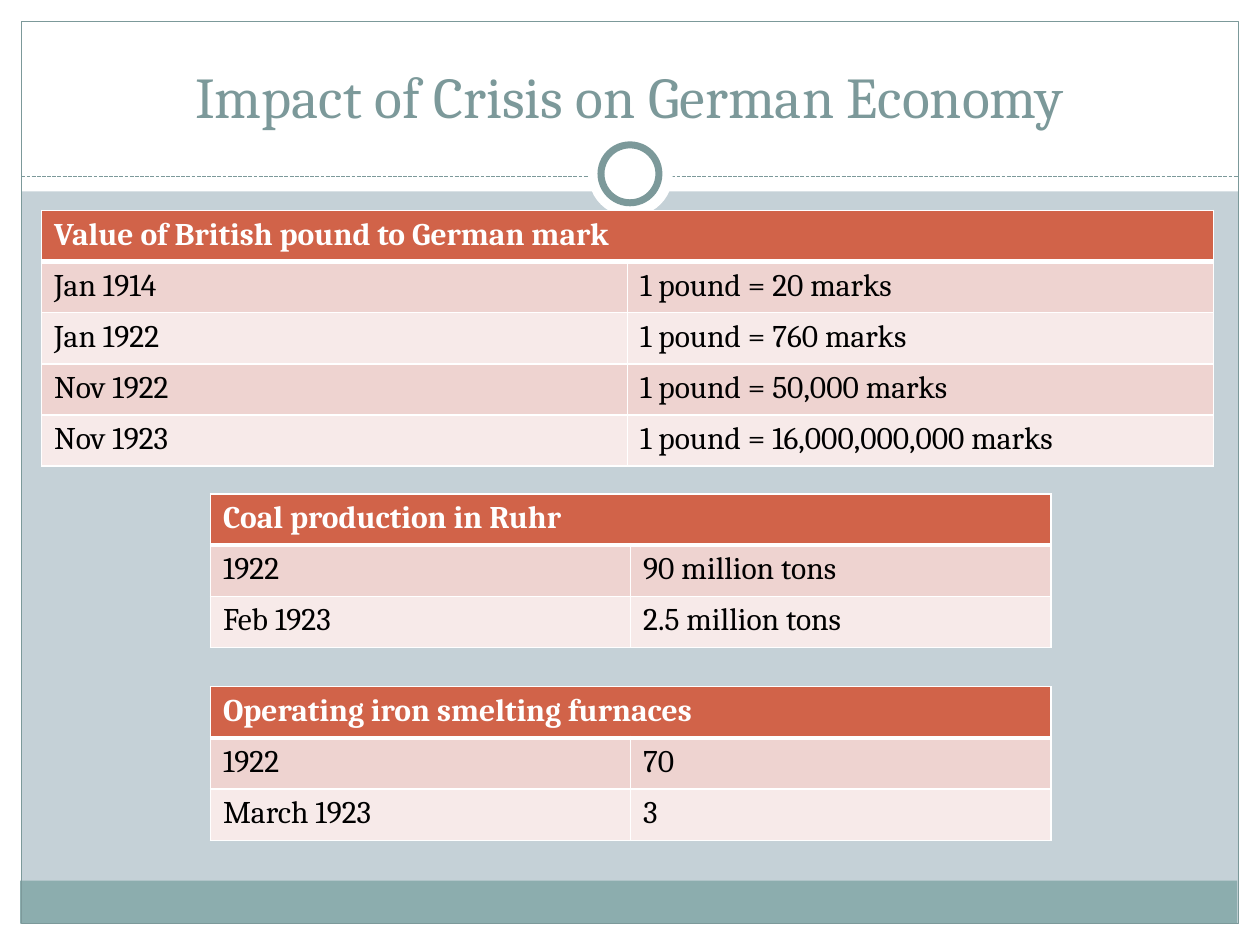
from pptx import Presentation
from pptx.dml.color import RGBColor
from pptx.enum.dml import MSO_LINE
from pptx.enum.shapes import MSO_CONNECTOR, MSO_SHAPE
from pptx.enum.text import MSO_ANCHOR, MSO_AUTO_SIZE, PP_ALIGN
from pptx.oxml.ns import qn
from pptx.util import Inches, Pt
from lxml.etree import SubElement


def color(value):
    return RGBColor.from_string(value)


class SlideBuilder:
    font = "Cambria"
    white = "FFFFFF"
    teal = "7C999A"
    band = "8CADAE"
    background = "C5D1D7"
    header = "D16349"
    stripes = ("EED3D0", "F7EAE9")

    def __init__(self, page):
        self.page = page
        page.background.fill.solid()
        page.background.fill.fore_color.rgb = color(self.background)

    def shape(self, kind, bounds, fill=None, line=None, width=0.75):
        shape = self.page.shapes.add_shape(kind, *map(Inches, bounds))
        shape.shadow.inherit = False
        if fill:
            shape.fill.solid()
            shape.fill.fore_color.rgb = color(fill)
        else:
            shape.fill.background()
        if line:
            shape.line.color.rgb = color(line)
            shape.line.width = Pt(width)
        else:
            shape.line.fill.background()

    def dashed_line(self, start, end):
        line = self.page.shapes.add_connector(
            MSO_CONNECTOR.STRAIGHT, *map(Inches, start + end))
        line.line.color.rgb = color(self.teal)
        line.line.width = Pt(0.75)
        line.line.dash_style = MSO_LINE.SQUARE_DOT
        SubElement(line.element.spPr, qn("a:effectLst"))

    def set_text(self, frame, text, size, ink, bold=False):
        frame.text = text
        para = frame.paragraphs[0]
        para.font.name = self.font
        para.font.size = Pt(size)
        para.font.bold = bold
        para.font.color.rgb = color(ink)
        return para

    def title(self, text, bounds):
        title = self.page.shapes.title
        title.left, title.top, title.width, title.height = map(Inches, bounds)
        title.element.getparent().append(title.element)
        frame = title.text_frame
        frame.word_wrap = True
        frame.auto_size = MSO_AUTO_SIZE.NONE
        frame.vertical_anchor = MSO_ANCHOR.BOTTOM
        self.set_text(frame, text, 33, self.teal).alignment = PP_ALIGN.CENTER

    def border(self, cell, side, width):
        properties = cell._tc.get_or_add_tcPr()
        line = SubElement(properties, qn(f"a:ln{side}"), w=str(Pt(width)))
        fill = SubElement(line, qn("a:solidFill"))
        SubElement(fill, qn("a:srgbClr"), val=self.white)

    def table(self, heading, rows, bounds):
        contents = [(heading, ""), *rows]
        table = self.page.shapes.add_table(
            len(contents), 2, *map(Inches, bounds)).table
        table.cell(0, 0).merge(table.cell(0, 1))
        for row, texts in enumerate(contents):
            is_header = row == 0
            fill = self.header if is_header else self.stripes[(row - 1) % 2]
            ink = self.white if is_header else "000000"
            widths = {"L": 1, "R": 1, "T": 3 if row == 1 else 1,
                      "B": 3 if is_header else 1}
            for column, text in enumerate(texts):
                cell = table.cell(row, column)
                self.set_text(cell.text_frame, text, 18, ink, is_header)
                for side, width in widths.items():
                    self.border(cell, side, width)
                cell.fill.solid()
                cell.fill.fore_color.rgb = color(fill)


def main():
    deck = Presentation()
    deck.slide_width, deck.slide_height = Inches(10), Inches(7.5)
    builder = SlideBuilder(deck.slides.add_slide(deck.slide_layouts[5]))

    margins = [(0, 7.33, 10, 0.17), (0, 0, 10, 1.52),
               (0, 0, 0.17, 7.5), (9.83, 0, 0.17, 7.5)]
    for bounds in margins:
        builder.shape(MSO_SHAPE.RECTANGLE, bounds, builder.white)
    builder.shape(MSO_SHAPE.RECTANGLE, (0.16, 6.99, 9.66, 0.34), builder.band)
    builder.shape(MSO_SHAPE.RECTANGLE, (0.17, 0.17, 9.66, 7.16),
                  line=builder.teal)
    builder.dashed_line((0.17, 1.4), (9.83, 1.4))
    builder.shape(MSO_SHAPE.OVAL, (4.67, 1.05, 0.67, 0.67), builder.white)
    builder.shape(MSO_SHAPE.OVAL, (4.77, 1.15, 0.46, 0.46), builder.white,
                  builder.teal, 4)

    builder.title("Impact of Crisis on German Economy",
                  (0.33, 0.25, 9.33, 0.83))
    builder.table("Value of British pound to German mark",
                  [("Jan 1914", "1 pound = 20 marks"),
                   ("Jan 1922", "1 pound = 760 marks"),
                   ("Nov 1922", "1 pound = 50,000 marks"),
                   ("Nov 1923", "1 pound = 16,000,000,000 marks")],
                  (0.33, 1.67, 9.3, 2.03))
    builder.table("Coal production in Ruhr",
                  [("1922", "90 million tons"),
                   ("Feb 1923", "2.5 million tons")],
                  (1.67, 3.92, 6.67, 1.22))
    builder.table("Operating iron smelting furnaces",
                  [("1922", "70"), ("March 1923", "3")],
                  (1.67, 5.45, 6.67, 1.22))
    deck.save("out.pptx")


if __name__ == "__main__":
    main()
